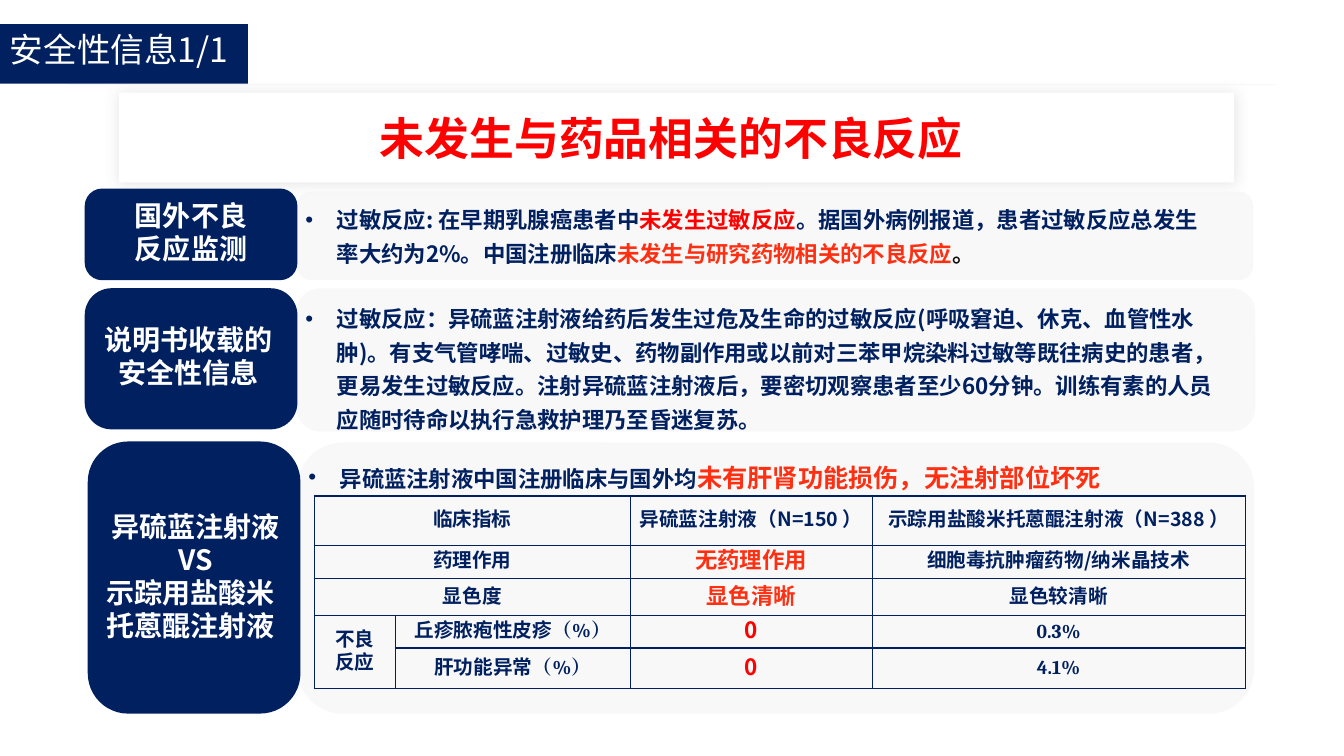
"""Build the drug safety information slide."""
from lxml.etree import SubElement
from pptx import Presentation
from pptx.dml.color import RGBColor
from pptx.enum.shapes import MSO_CONNECTOR, MSO_SHAPE
from pptx.enum.text import MSO_ANCHOR, PP_ALIGN
from pptx.oxml import parse_xml
from pptx.oxml.ns import nsdecls, qn
from pptx.util import Inches, Pt

NAVY = RGBColor(0x00, 0x20, 0x60)
RED = RGBColor(0xFF, 0x00, 0x00)
ORANGE = RGBColor(0xFF, 0x2F, 0x12)
BLACK = RGBColor(0x0D, 0x0D, 0x0D)
WHITE = RGBColor(0xFF, 0xFF, 0xFF)
PANEL_GREY = RGBColor(0xF2, 0xF2, 0xF2)
RULE_GREY = RGBColor(0x6C, 0x6C, 0x73)
SANS = "Noto Sans CJK JP"
SERIF = "Cambria"
LEFT, CENTER = PP_ALIGN.LEFT, PP_ALIGN.CENTER


def add_box(kind, place, color):
    shape = slide.shapes.add_shape(kind, *map(Inches, place))
    shape.shadow.inherit = False
    shape.fill.solid()
    shape.fill.fore_color.rgb = color
    shape.line.fill.background()
    return shape


def add_text(frame, runs, align=LEFT, pitch=1.18, bold=True):
    frame.word_wrap = True
    paragraph = frame.paragraphs[0]
    if paragraph.runs:
        paragraph = frame.add_paragraph()
    paragraph.alignment = align
    paragraph.line_spacing = Pt(round(pitch * max(run[1] for run in runs), 1))
    for text, size, color, font in runs:
        run = paragraph.add_run()
        run.text = text
        run.font.size = Pt(size)
        run.font.bold = bold
        run.font.color.rgb = color
        run.font.name = font
        SubElement(run.font._element, qn("a:ea"), typeface=font)
    return paragraph._p.get_or_add_pPr()


presentation = Presentation()
presentation.slide_width = Inches(13.33)
presentation.slide_height = Inches(7.5)
slide = presentation.slides.add_slide(presentation.slide_layouts[6])

rule = slide.shapes.add_connector(
    MSO_CONNECTOR.STRAIGHT, Inches(0.68), Inches(0.84), Inches(12.65), Inches(0.84))
rule.line.width = Pt(0.05)
rule.line.color.rgb = RULE_GREY
rule_color = next(rule._element.spPr.iter(qn("a:srgbClr")))
SubElement(rule_color, qn("a:alpha"), val="40000")
SubElement(rule._element.spPr, qn("a:effectLst"))

title = add_box(MSO_SHAPE.RECTANGLE, (1.18, 0.92, 11.06, 0.89), WHITE)
title.text_frame.vertical_anchor = MSO_ANCHOR.MIDDLE
add_text(title.text_frame, [("未发生与药品相关的不良反应 ", 32, RED, SANS)], CENTER)
effects = title._element.spPr.find(qn("a:effectLst"))
effects.append(parse_xml(
    f'<a:outerShdw {nsdecls("a")} blurRad="127000" dist="0" algn="ctr" rotWithShape="0">'
    '<a:srgbClr val="BFBFBF"><a:alpha val="40000"/></a:srgbClr></a:outerShdw>'))

header = add_box(MSO_SHAPE.RECTANGLE, (0, 0.24, 2.46, 0.59), NAVY)
header.text_frame.vertical_anchor = MSO_ANCHOR.TOP
add_text(header.text_frame, [("安全性信息1/1", 24, WHITE, SANS)], bold=False)

SECTIONS = [
    {"panel": (2.94, 1.9, 9.49, 0.88), "body": (2.95, 1.94, 9.09, 1.11),
     "tab": (0.84, 1.87, 2.11, 0.91), "label": (0.77, 1.93, 2, 0.77),
     "names": [("国外不良", LEFT), ("反应监测", LEFT)],
     "runs": [("过敏反应: 在早期乳腺癌患者中", 16, NAVY, SANS),
              ("未发生过敏反应", 16, RED, SANS),
              ("。据国外病例报道，患者过敏反应总发生率大约为2%。中国注册临床", 16, NAVY, SANS),
              ("未发生与研究药物相关的不良反应", 16, ORANGE, SANS),
              ("。", 16, BLACK, SANS)]},
    {"panel": (2.94, 2.86, 9.51, 1.42), "body": (2.95, 2.92, 9.28, 0.99),
     "tab": (0.84, 2.86, 2.11, 1.4), "label": (0.29, 3.16, 2.69, 0.77),
     "names": [("说明书收载的", CENTER), ("安全性信息", CENTER)],
     "runs": [("过敏反应：异硫蓝注射液给药后发生过危及生命的过敏反应(呼吸窘迫、休克、血管性水肿)。"
               "有支气管哮喘、过敏史、药物副作用或以前对三苯甲烷染料过敏等既往病史的患者，"
               "更易发生过敏反应。注射异硫蓝注射液后，要密切观察患者至少60分钟。"
               "训练有素的人员应随时待命以执行急救护理乃至昏迷复苏。", 16, NAVY, SANS)]},
    {"panel": (2.95, 4.39, 9.49, 2.69), "body": (2.98, 4.47, 9.36, 2.11),
     "tab": (0.87, 4.38, 2.11, 2.7), "label": (0.49, 5.01, 2.43, 1.45),
     "names": [("异硫蓝注射液 VS", CENTER), ("示踪用盐酸米托蒽醌注射液", LEFT)],
     "runs": [("异硫蓝注射液中国注册临床与国外均", 16, NAVY, SANS),
              ("未有肝肾功能损伤，无注射部位坏死", 18, ORANGE, SANS)]},
]
for section in SECTIONS:
    panel = add_box(MSO_SHAPE.ROUNDED_RECTANGLE, section["panel"], PANEL_GREY)
    panel_color = next(panel._element.spPr.iter(qn("a:srgbClr")))
    SubElement(panel_color, qn("a:alpha"), val="50000")

    body = slide.shapes.add_textbox(*map(Inches, section["body"])).text_frame
    body.margin_left = body.margin_right = Inches(0.08)
    body.margin_top = body.margin_bottom = Inches(0.04)
    properties = add_text(body, section["runs"], pitch=1.5)
    properties.set("marL", str(Inches(0.31)))
    properties.set("indent", str(Inches(-0.31)))
    SubElement(properties, qn("a:buFont"), typeface="Arial")
    SubElement(properties, qn("a:buChar"), char="•")

    tab = add_box(MSO_SHAPE.ROUNDED_RECTANGLE, section["tab"], NAVY)
    tab.adjustments[0] = 0.19
    label = slide.shapes.add_textbox(*map(Inches, section["label"])).text_frame
    for name, align in section["names"]:
        properties = add_text(label, [(name, 20, WHITE, SANS)], align)
        properties.set("marL", str(Inches(0.47)))

COLUMN_WIDTHS = [0.8, 2.33, 2.4, 3.7]
ROW_HEIGHTS = [0.49, 0.33, 0.37, 0.32, 0.4]
PERCENT = ("（%）", 14, NAVY, SERIF)
ROWS = [
    ["临床指标", "", "异硫蓝注射液（N=150 ）", "示踪用盐酸米托蒽醌注射液（N=388 ）"],
    ["药理作用", "", ("无药理作用", 16, ORANGE, SANS), "细胞毒抗肿瘤药物/纳米晶技术"],
    ["显色度", "", ("显色清晰", 16, ORANGE, SANS), "显色较清晰"],
    ["不良\n反应", "丘疹脓疱性皮疹", ("0", 16, RED, SANS), ("0.3%", 14, NAVY, SERIF)],
    ["", "肝功能异常", ("0", 16, RED, SANS), ("4.1%", 14, NAVY, SERIF)],
]
table = slide.shapes.add_table(
    len(ROWS), len(COLUMN_WIDTHS), Inches(3.12), Inches(4.92), Inches(9.23), Inches(1.91)).table
table.first_row = table.horz_banding = False
for column, width in zip(table.columns, COLUMN_WIDTHS):
    column.width = Inches(width)
for row, height in zip(table.rows, ROW_HEIGHTS):
    row.height = Inches(height)
for row_index in range(3):
    table.cell(row_index, 0).merge(table.cell(row_index, 1))
table.cell(3, 0).merge(table.cell(4, 0))

for row_index, values in enumerate(ROWS):
    for column_index, value in enumerate(values):
        cell = table.cell(row_index, column_index)
        cell.fill.background()
        cell.vertical_anchor = MSO_ANCHOR.MIDDLE
        cell.margin_left = cell.margin_right = cell.margin_top = cell.margin_bottom = 0
        for position, side in enumerate(("lnL", "lnR", "lnT", "lnB")):
            cell._tc.get_or_add_tcPr().insert(position, parse_xml(
                f'<a:{side} {nsdecls("a")} w="12700"><a:solidFill>'
                f'<a:srgbClr val="{NAVY}"/></a:solidFill></a:{side}>'))
        if not value:
            continue
        if isinstance(value, tuple):
            lines = [[value]]
        else:
            lines = [[(line, 14, NAVY, SANS)] for line in value.split("\n")]
        if row_index >= 3 and column_index == 1:
            lines[0].append(PERCENT)
        for runs in lines:
            add_text(cell.text_frame, runs, CENTER)

presentation.save("out.pptx")
